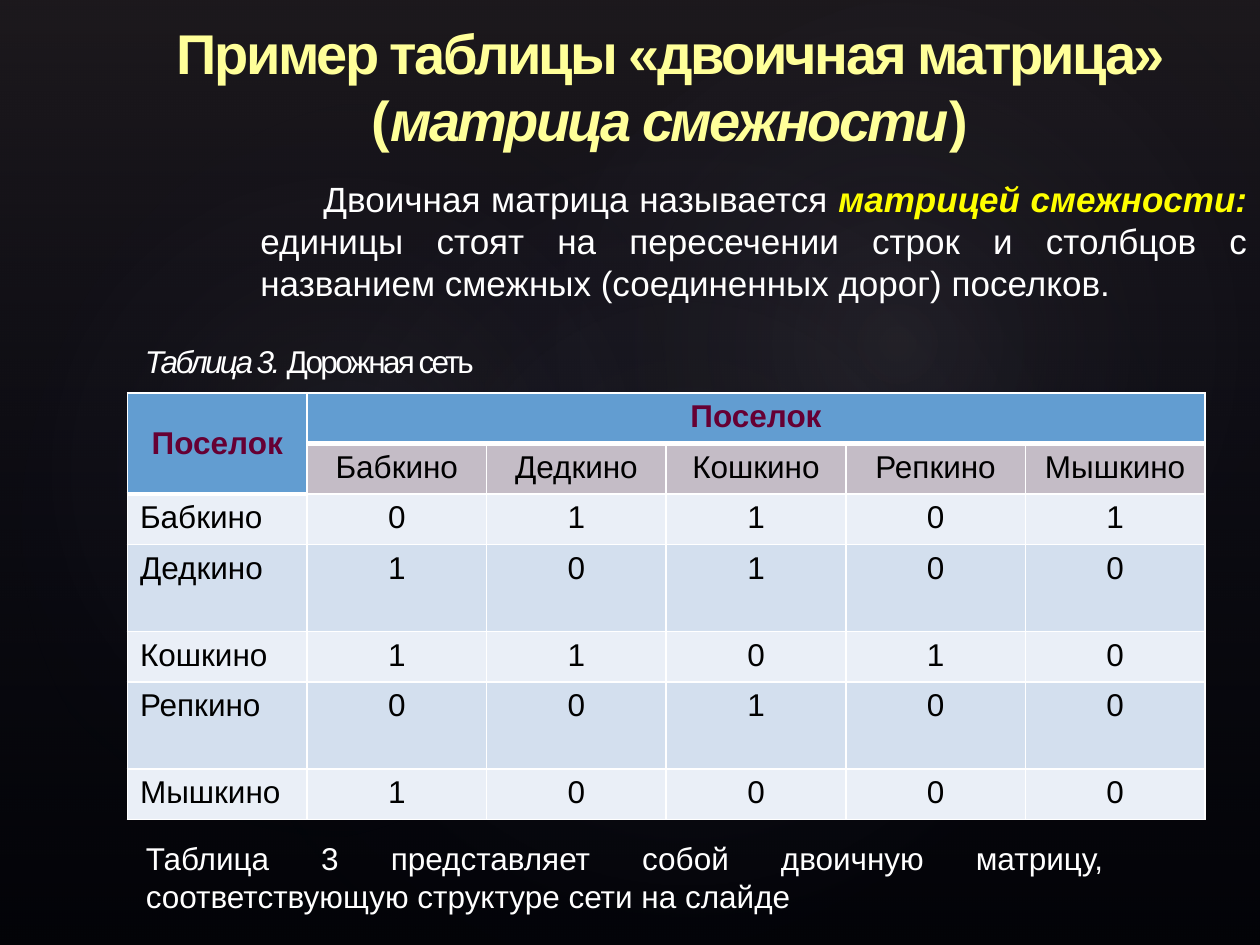
import pptx
import pptx.dml.color
import pptx.enum.shapes
import pptx.enum.text
import pptx.oxml
import pptx.oxml.ns
import pptx.util

Cm = pptx.util.Cm
Pt = pptx.util.Pt
Align = pptx.enum.text.PP_ALIGN
Anchor = pptx.enum.text.MSO_ANCHOR
Shape = pptx.enum.shapes.MSO_SHAPE
NS = pptx.oxml.ns.nsdecls("a")

TOWNS = ["Бабкино", "Дедкино", "Кошкино", "Репкино", "Мышкино"]
LINKS = ["01101", "10100", "11010", "00100", "10000"]
HEIGHTS = [1.02, 1.02, 1.02, 1.75, 1.02, 1.75, 1.02]
GLOWS = [
    (3.81, 2.9, 20.12, 15.85, 328.7, 7),
    (-0.76, 3.25, 15.39, 12.45, 294.3, 8),
    (9.09, 0.33, 18.01, 13.21, 328.7, 8),
]


def paint(hue):
    return pptx.dml.color.RGBColor.from_string(hue)


def write(para, text, size=18, color="FFFFFF", bold=False, slant=False, track=0):
    run = para.add_run()
    run.text = text
    font = run.font
    font.name = "Arial"
    font.size = Pt(size)
    font.bold = bold
    font.italic = slant
    font.color.rgb = paint(color)
    if track:
        run._r.get_or_add_rPr().set("spc", str(int(track * 100)))


def blend(shape, stops, shade):
    marks = "".join(
        f'<a:gs pos="{place * 1000}"><a:srgbClr val="{hue}">'
        f'<a:alpha val="{alpha * 1000}"/></a:srgbClr></a:gs>'
        for place, hue, alpha in stops
    )
    fill = pptx.oxml.parse_xml(
        f'<a:gradFill {NS} rotWithShape="1"><a:gsLst>{marks}</a:gsLst>{shade}</a:gradFill>'
    )
    shape._element.spPr.find(pptx.oxml.ns.qn("a:prstGeom")).addnext(fill)


def add_form(slide, kind, left, top, width, height, turn=0):
    form = slide.shapes.add_shape(kind, Cm(left), Cm(top), Cm(width), Cm(height))
    form.rotation = turn
    form.shadow.inherit = False
    form.line.fill.background()
    return form


def add_back(slide):
    fill = slide.background.fill
    fill.solid()
    fill.fore_color.rgb = paint("000000")
    veil = add_form(slide, Shape.RECTANGLE, 0, 0, 25.4, 19.05)
    blend(veil, [(0, "504652", 36), (100, "242852", 10)], '<a:lin ang="5400000" scaled="0"/>')
    round_path = (
        '<a:path path="circle"><a:fillToRect l="50000" t="50000" r="50000" b="50000"/></a:path>'
    )
    for left, top, width, height, turn, alpha in GLOWS:
        glow = add_form(slide, Shape.OVAL, left, top, width, height, turn)
        blend(glow, [(0, "C4BCC6", alpha), (58, "242852", 0)], round_path)


def add_text(slide, left, top, width, height, align, anchor=Anchor.TOP):
    frame = slide.shapes.add_textbox(Cm(left), Cm(top), Cm(width), Cm(height)).text_frame
    frame.word_wrap = True
    frame.vertical_anchor = anchor
    para = frame.paragraphs[0]
    para.alignment = align
    return para


def edge(cell, **widths):
    props = cell._tc.get_or_add_tcPr()
    for side in "LRTB":
        width = Pt(widths.get(side, 1))
        props.append(pptx.oxml.parse_xml(
            f'<a:ln{side} {NS} w="{width}"><a:solidFill><a:srgbClr val="FFFFFF"/>'
            f"</a:solidFill></a:ln{side}>"
        ))


def set_cell(cell, text, fill, align=Align.CENTER, **style):
    cell.fill.solid()
    cell.fill.fore_color.rgb = paint(fill)
    para = cell.text_frame.paragraphs[0]
    para.alignment = align
    if text:
        write(para, text, **style)


def add_grid(slide):
    count = len(TOWNS) + 1
    frame = slide.shapes.add_table(
        len(HEIGHTS), count, Cm(2.57), Cm(7.92), Cm(3.62 * count), Cm(sum(HEIGHTS))
    )
    table = frame.table
    for col in table.columns:
        col.width = Cm(3.62)
    for row, height in zip(table.rows, HEIGHTS):
        row.height = Cm(height)

    for y in range(len(HEIGHTS)):
        for x in range(count):
            base = 1 if x == 0 else 0
            edge(table.cell(y, x), B=3 if y <= base else 1, T=3 if 0 < y <= base + 1 else 1)

    table.cell(0, 0).merge(table.cell(1, 0))
    table.cell(0, 1).merge(table.cell(0, count - 1))
    for x in (0, 1):
        set_cell(table.cell(0, x), "Поселок", "629DD1", color="660033", bold=True)
    table.cell(0, 0).vertical_anchor = Anchor.MIDDLE

    for x, town in enumerate(TOWNS, 1):
        set_cell(table.cell(1, x), town, "C4BCC6", color="000000")
    for y, (town, links) in enumerate(zip(TOWNS, LINKS), 2):
        fill = "D3DFEE" if y % 2 else "EAEFF7"
        set_cell(table.cell(y, 0), town, fill, Align.LEFT, color="000000")
        for x, mark in enumerate(links, 1):
            set_cell(table.cell(y, x), mark, fill, color="000000")


def main():
    deck = pptx.Presentation()
    deck.slide_width = Cm(25.4)
    deck.slide_height = Cm(19.05)
    slide = deck.slides.add_slide(deck.slide_layouts[6])
    add_back(slide)
    add_grid(slide)

    lead = add_text(slide, 5, 3.94, 20.4, 2.31, Align.JUSTIFY, Anchor.BOTTOM)
    lead._p.get_or_add_pPr().set("indent", str(Cm(1.27)))
    write(lead, "Двоичная матрица называется ", size=20)
    write(lead, "матрицей смежности: ", size=20, color="FFFF00", bold=True, slant=True)
    write(lead, "единицы стоят на пересечении строк и столбцов с названием "
          "смежных (соединенных дорог) поселков.", size=20)

    head = add_text(slide, 2.69, 0.25, 21.62, 3.07, Align.CENTER)
    look = dict(size=32, color="FFFF99", bold=True, track=-1.5)
    write(head, "Пример таблицы «двоичная матрица» (", **look)
    write(head, "матрица смежности", slant=True, **look)
    write(head, ")", **look)

    note = add_text(slide, 2.69, 16.76, 19.81, 1.8, Align.JUSTIFY, Anchor.BOTTOM)
    write(note, "Таблица 3 представляет собой двоичную матрицу, "
          "соответствующую структуре сети на слайде")

    label = add_text(slide, 2.67, 6.86, 14.2, 0.94, Align.LEFT)
    label.line_spacing = 0.9
    write(label, "Таблица 3. ", slant=True, track=-1.5)
    write(label, "Дорожная сеть", track=-1.5)

    deck.save("out.pptx")


if __name__ == "__main__":
    main()
